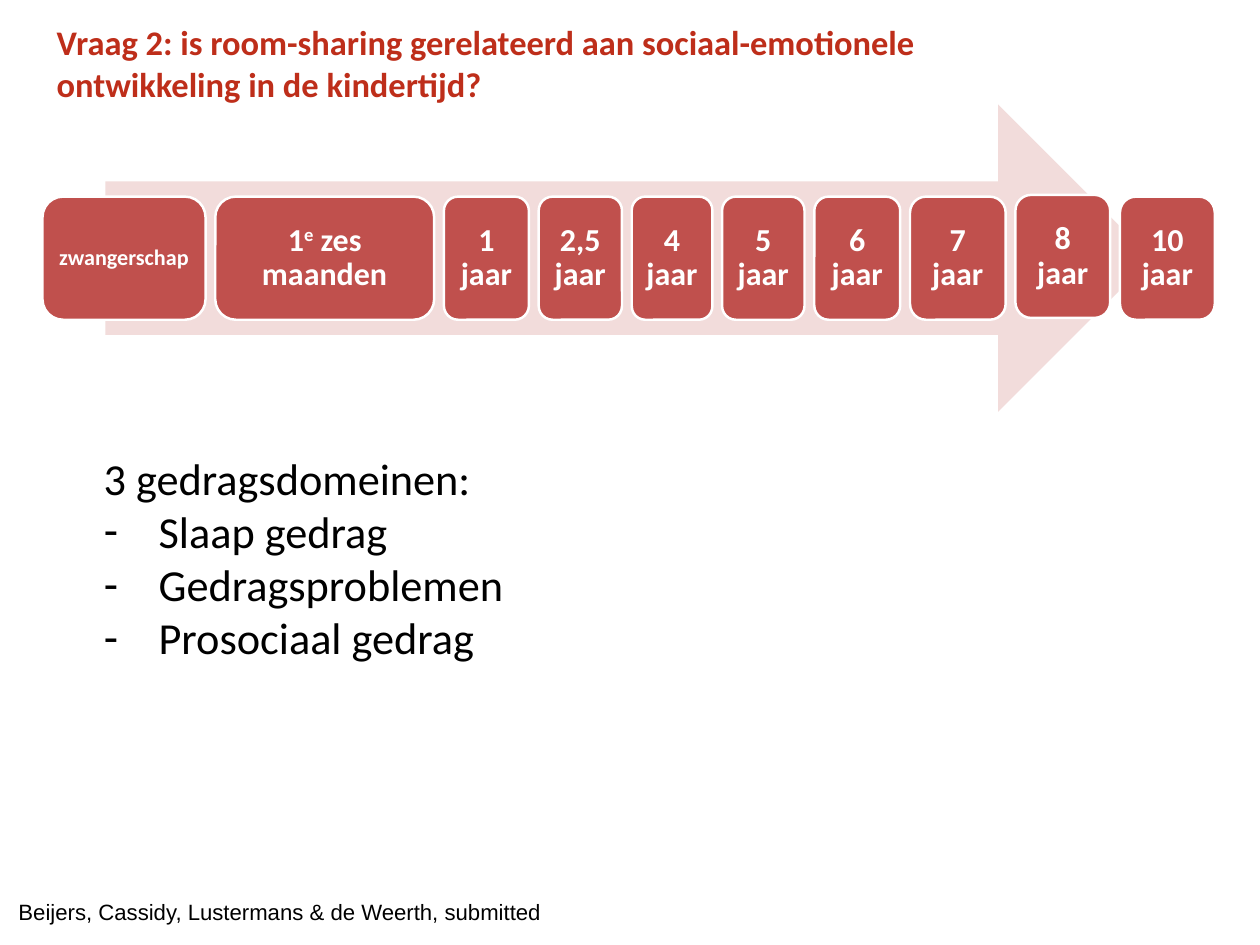
from lxml import etree
from pptx import Presentation
from pptx import util as u
from pptx.dml.color import RGBColor
from pptx.enum import shapes, text
from pptx.oxml import ns

PX = u.Inches(1) // 100
COLORS = {"title": "BE2E1A", "arrow": "F2DCDB", "box": "C0504D", "white": "FFFFFF", "black": "000000"}


def place(shape, left, top, width, height):
    bounds = {"left": left, "top": top, "width": width, "height": height}
    for name, value in bounds.items():
        setattr(shape, name, value * PX)


def add_run(paragraph, content, size, color, bold=False, name="Calibri"):
    run = paragraph.add_run()
    run.text = content
    for key, value in {"size": u.Pt(size), "bold": bold, "name": name}.items():
        setattr(run.font, key, value)
    run.font.color.rgb = RGBColor.from_string(COLORS[color])
    return run


presentation = Presentation()
presentation.slide_width = 1422 * PX
presentation.slide_height = 1067 * PX
slide = presentation.slides.add_slide(presentation.slide_layouts[1])

title = slide.shapes.title
place(title, 60, 20, 1220, 118)
frame_format = {"vertical_anchor": text.MSO_ANCHOR.TOP, "auto_size": text.MSO_AUTO_SIZE.NONE, "word_wrap": True}
title_format = {side: 4 * PX for side in ("margin_left", "margin_top", "margin_right", "margin_bottom")}
for key, value in {**frame_format, **title_format}.items():
    setattr(title.text_frame, key, value)
paragraph = title.text_frame.paragraphs[0]
paragraph.alignment = text.PP_ALIGN.LEFT
add_run(paragraph, "Vraag 2: is room-sharing gerelateerd aan sociaal-emotionele", 28, "title", True)
paragraph.add_line_break()
add_run(paragraph, "ontwikkeling in de kindertijd?", 28, "title", True)

arrow = slide.shapes.add_shape(shapes.MSO_SHAPE.RIGHT_ARROW, 119 * PX, 118 * PX, 1181 * PX, 347 * PX)
arrow.shadow.inherit = False
arrow.fill.solid()
arrow.fill.fore_color.rgb = RGBColor.from_string(COLORS["arrow"])
arrow.line.fill.background()

periods = [
    (["zwangerschap"], 184, 222, 18, 7),
    (["1", "e", " zes maanden"], 247, 222, 26, 11),
    (["1 jaar"], 96, 222, 26, 11),
    (["2,5 jaar"], 94, 222, 26, 11),
    (["4 jaar"], 91, 222, 26, 11),
    (["5 jaar"], 93, 222, 26, 11),
    (["6 jaar"], 97, 222, 26, 11),
    (["7 jaar"], 108, 222, 26, 11),
    (["8 jaar"], 107, 220, 26, 11),
    (["10 jaar"], 107, 222, 26, 11),
]
left, gap = 48, 11
for parts, width, top, size, margin in periods:
    box = slide.shapes.add_shape(shapes.MSO_SHAPE.ROUNDED_RECTANGLE, left * PX, top * PX, width * PX, 139 * PX)
    box.shadow.inherit = False
    box.fill.solid()
    box.fill.fore_color.rgb = RGBColor.from_string(COLORS["box"])
    box.line.color.rgb = RGBColor.from_string(COLORS["white"])
    box.line.width = u.Pt(2)
    box_format = {side: margin * PX for side in title_format}
    box_format.update(word_wrap=True, vertical_anchor=text.MSO_ANCHOR.MIDDLE)
    for key, value in box_format.items():
        setattr(box.text_frame, key, value)
    paragraph = box.text_frame.paragraphs[0]
    paragraph.alignment = text.PP_ALIGN.CENTER
    paragraph.line_spacing = 0.9
    for part in parts:
        run = add_run(paragraph, part, size, "white", True)
        if part == "e":
            run._r.get_or_add_rPr().set("baseline", "30000")
    left += width + gap

body = slide.placeholders[1]
place(body, 107, 504, 770, 300)
for key, value in frame_format.items():
    setattr(body.text_frame, key, value)
domains = ["3 gedragsdomeinen:", "Slaap gedrag", "Gedragsproblemen", "Prosociaal gedrag"]
for index, domain in enumerate(domains):
    paragraph = body.text_frame.add_paragraph() if index else body.text_frame.paragraphs[0]
    properties = paragraph._p.get_or_add_pPr()
    indent = 62 * PX if index else 0
    properties.set("marL", str(indent))
    properties.set("indent", str(-indent))
    if index:
        etree.SubElement(properties, ns.qn("a:buChar")).set("char", "-")
    else:
        etree.SubElement(properties, ns.qn("a:buNone"))
    paragraph.space_before = u.Pt(0)
    add_run(paragraph, domain, 36, "black")

citation = slide.shapes.add_textbox(11 * PX, 1009 * PX, 1071 * PX, 40 * PX)
citation.text_frame.word_wrap = True
add_run(citation.text_frame.paragraphs[0], "Beijers, Cassidy, Lustermans & de Weerth, submitted", 18, "black", name="Arial")

presentation.save("out.pptx")
